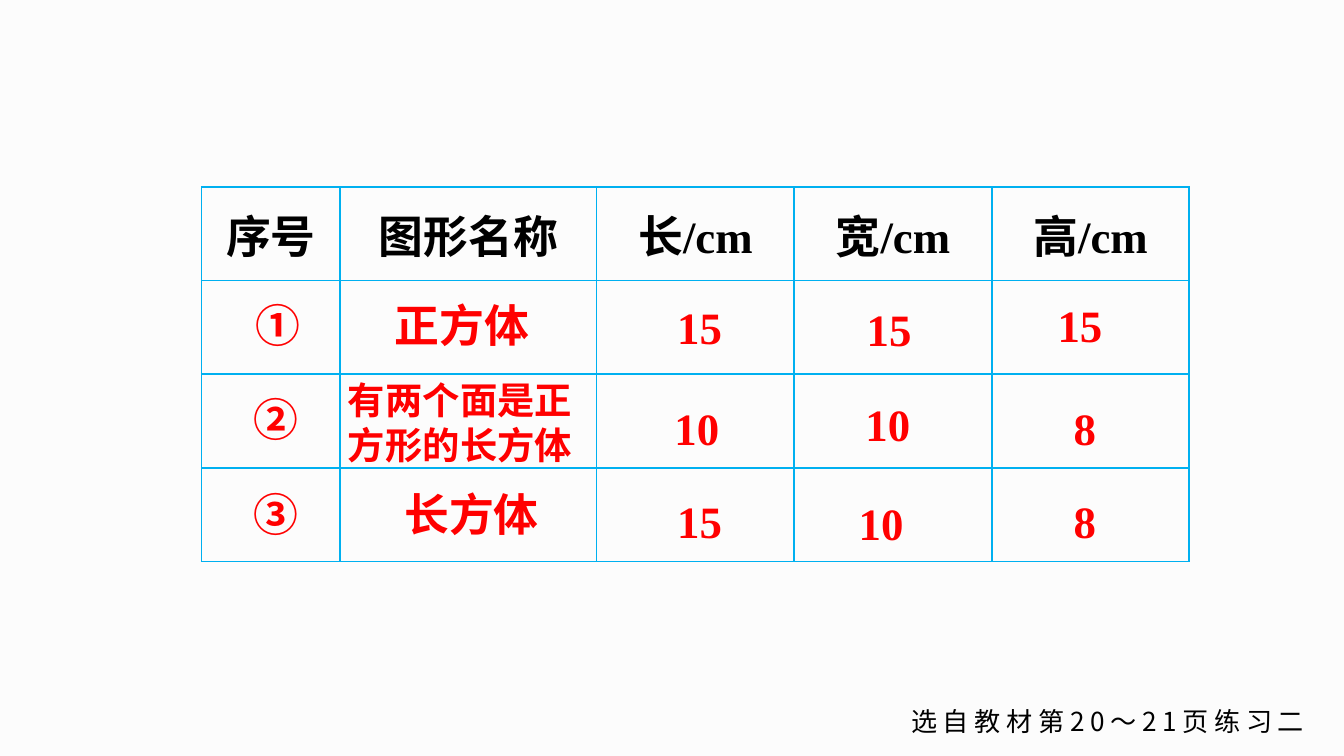
from dataclasses import dataclass
from itertools import accumulate

from lxml import etree
from pptx import Presentation
from pptx.dml.color import RGBColor
from pptx.enum.text import MSO_ANCHOR, PP_ALIGN
from pptx.oxml.ns import qn
from pptx.util import Inches, Pt

CENTER = PP_ALIGN.CENTER
MIDDLE = MSO_ANCHOR.MIDDLE
BLANK_LAYOUT = 6


@dataclass(frozen=True)
class Theme:
    background: str = "FCFCFC"
    ink: str = "000000"
    answer: str = "FF0000"
    border: str = "00B0F0"
    chinese: str = "Noto Sans CJK SC"
    latin: str = "Times New Roman"
    body_size: int = 24
    small_size: int = 20
    caption_size: int = 14


THEME = Theme()

SLIDE_WIDTH = 10
SLIDE_HEIGHT = SLIDE_WIDTH * 9 / 16
TABLE_LEFT, TABLE_TOP, TABLE_HEIGHT = 1.5, 1.39, 2.79
COLUMN_WIDTHS = [1.03, 1.91, 1.47, 1.47, 1.47]
HEADERS = ["序号", "图形名称", "长/cm", "宽/cm", "高/cm"]
ROW_COUNT = 4
ROW_HEIGHT = TABLE_HEIGHT / ROW_COUNT
COLUMN_LEFTS = list(accumulate(COLUMN_WIDTHS, initial=TABLE_LEFT))


@dataclass(frozen=True)
class Answer:
    """An answer in a table cell; the insets run from the cell's top left corner."""
    text: str
    row: int
    column: int
    inset_x: float
    inset_y: float
    width: float = 0.65
    height: float = 0.5
    font: str = THEME.latin
    size: int = THEME.body_size


ANSWERS = [
    Answer("①", 1, 0, 0.3, 0.08, font=THEME.chinese),
    Answer("正方体", 1, 1, 0.31, 0.08, width=1.42, font=THEME.chinese),
    Answer("15", 1, 2, 0.5, 0.09),
    Answer("15", 1, 3, 0.44, 0.11),
    Answer("15", 1, 4, 0.39, 0.08),
    Answer("②", 2, 0, 0.29, 0.08, font=THEME.chinese),
    Answer("有两个面是正方形的长方体", 2, 1, -0.04, -0.03, width=1.95, height=0.77,
           font=THEME.chinese, size=THEME.small_size),
    Answer("10", 2, 2, 0.48, 0.15),
    Answer("10", 2, 3, 0.43, 0.12),
    Answer("8", 2, 4, 0.51, 0.15),
    Answer("③", 3, 0, 0.29, 0.09, font=THEME.chinese),
    Answer("长方体", 3, 1, 0.38, 0.09, width=1.27, font=THEME.chinese),
    Answer("15", 3, 2, 0.5, 0.14),
    Answer("10", 3, 3, 0.38, 0.16),
    Answer("8", 3, 4, 0.51, 0.14),
]


def write_text(paragraph, text: str, name: str, size: int, color: str, bold: bool):
    """Add a formatted run and return its properties element."""
    run = paragraph.add_run()
    run.text = text
    for attribute, value in {"name": name, "size": Pt(size), "bold": bold}.items():
        setattr(run.font, attribute, value)
    run.font.color.rgb = RGBColor.from_string(color)
    properties = run.font._element
    etree.SubElement(properties, qn("a:ea"), typeface=THEME.chinese)
    return properties


def add_text_box(slide, left: float, top: float, width: float, height: float, wrap: bool):
    """Add an empty text box and return its first paragraph."""
    box = slide.shapes.add_textbox(*map(Inches, (left, top, width, height)))
    box.text_frame.word_wrap = wrap
    return box.text_frame.paragraphs[0]


def outline_cell(cell) -> None:
    properties = cell._tc.get_or_add_tcPr()
    for side in ("lnL", "lnR", "lnT", "lnB"):
        line = etree.SubElement(properties, qn(f"a:{side}"), w=str(Pt(1)))
        fill = etree.SubElement(line, qn("a:solidFill"))
        etree.SubElement(fill, qn("a:srgbClr"), val=THEME.border)
    cell.fill.background()


def add_dimension_table(slide) -> None:
    table = slide.shapes.add_table(
        ROW_COUNT, len(HEADERS), Inches(TABLE_LEFT), Inches(TABLE_TOP),
        Inches(sum(COLUMN_WIDTHS)), Inches(TABLE_HEIGHT)).table
    table.first_row = table.horz_banding = False
    for column, width in zip(table.columns, COLUMN_WIDTHS):
        column.width = Inches(width)
    for cell in table.iter_cells():
        outline_cell(cell)
    for index, header in enumerate(HEADERS):
        cell = table.cell(0, index)
        cell.vertical_anchor = MIDDLE
        paragraph = cell.text_frame.paragraphs[0]
        paragraph.alignment = CENTER
        write_text(paragraph, header, THEME.latin, THEME.body_size, THEME.ink, True)


def add_answer(slide, answer: Answer) -> None:
    left = COLUMN_LEFTS[answer.column] + answer.inset_x
    top = TABLE_TOP + answer.row * ROW_HEIGHT + answer.inset_y
    paragraph = add_text_box(slide, left, top, answer.width, answer.height, True)
    write_text(paragraph, answer.text, answer.font, answer.size, THEME.answer, True)


def add_caption(slide) -> None:
    paragraph = add_text_box(slide, 6.68, 5.2, 3.32, 0.34, False)
    properties = write_text(paragraph, "选自教材第20～21页练习二", THEME.chinese,
                            THEME.caption_size, THEME.ink, False)
    properties.set("spc", "300")


def main() -> None:
    presentation = Presentation()
    presentation.slide_width = Inches(SLIDE_WIDTH)
    presentation.slide_height = Inches(SLIDE_HEIGHT)
    slide = presentation.slides.add_slide(presentation.slide_layouts[BLANK_LAYOUT])
    background = slide.background.fill
    background.solid()
    background.fore_color.rgb = RGBColor.from_string(THEME.background)
    add_dimension_table(slide)
    add_caption(slide)
    for answer in ANSWERS:
        add_answer(slide, answer)
    presentation.save("out.pptx")


if __name__ == "__main__":
    main()
